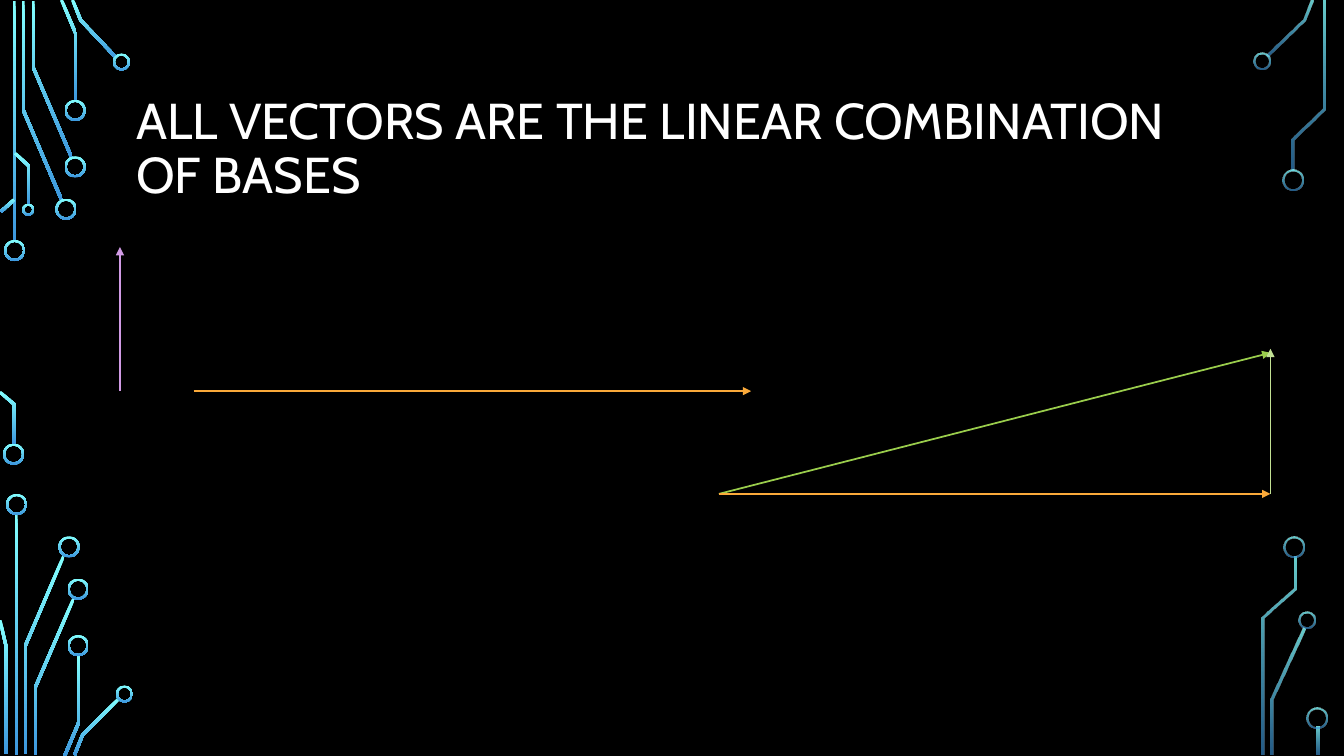
from math import hypot

from lxml import etree
from pptx import Presentation
from pptx.dml.color import RGBColor
from pptx.enum.shapes import MSO_CONNECTOR, MSO_SHAPE
from pptx.enum.text import MSO_ANCHOR, MSO_AUTO_SIZE, PP_ALIGN
from pptx.oxml.ns import qn
from pptx.util import Inches, Pt

STRAIGHT = MSO_CONNECTOR.STRAIGHT
DONUT = MSO_SHAPE.DONUT
MIDDLE = MSO_ANCHOR.MIDDLE
NO_AUTOFIT = MSO_AUTO_SIZE.NONE
LEFT = PP_ALIGN.LEFT

TITLE = "ALL VECTORS ARE THE LINEAR COMBINATION OF BASES"
TITLE_BOX = (1.25, 0.68, 10.83, 1.62)
TITLE_FONT = {"name": "Cabin", "size": Pt(36), "bold": False}

ORIGIN, CORNER = (7.13, 4.9), (12.6, 4.9)
VECTORS = [
    (ORIGIN, (12.6, 3.5), "9ACD4C"),
    (ORIGIN, CORNER, "FAA93A"),
    (CORNER, (12.6, 3.46), "C2E194"),
    ((1.19, 3.88), (1.19, 2.45), "D19BE5"),
    ((1.92, 3.88), (7.45, 3.88), "FAA93A"),
]

GLOW = ("82FFFF", "3D97DE")
TRACE_WIDTH = 0.03
RING_WIDTH = 0.02
CIRCUITS = [
    {
        "opacity": (100, 100),
        "traces": [
            [(0.14, 0.01), (0.14, 2.4)],
            [(0.23, 0.01), (0.23, 1.09), (0.61, 1.98)],
            [(0.33, 0.01), (0.33, 0.67), (0.71, 1.56)],
            [(0.61, 0), (0.75, 0.33), (0.75, 1)],
            [(0.72, 0), (0.8, 0.2), (1.15, 0.57)],
            [(0.14, 1.98), (0.01, 2.1)],
            [(0, 3.89), (0.14, 4.01), (0.14, 4.41)],
            [(0.15, 1.52), (0.29, 1.65), (0.29, 2.03)],
            [(0.16, 5.1), (0.16, 7.49)],
            [(0.25, 7.48), (0.25, 6.41), (0.63, 5.52)],
            [(0, 6.15), (0.06, 6.41), (0.06, 7.48)],
            [(0.35, 7.49), (0.35, 6.82), (0.73, 5.94)],
            [(0.64, 7.5), (0.78, 7.17), (0.78, 6.5)],
            [(0.74, 7.49), (0.82, 7.29), (1.18, 6.93)],
        ],
        "rings": [
            (0.04, 2.38, 0.21), (0.03, 4.4, 0.21), (0.55, 1.97, 0.21),
            (0.64, 1.55, 0.21), (0.64, 0.99, 0.21), (1.12, 0.53, 0.17),
            (0.22, 2.02, 0.12), (0.06, 4.9, 0.21), (0.58, 5.32, 0.21),
            (0.67, 5.74, 0.21), (0.67, 6.3, 0.21), (1.15, 6.8, 0.17),
        ],
    },
    {
        "opacity": (80, 60),
        "traces": [
            [(12.57, 0.55), (12.93, 0.2), (13.01, 0)],
            [(12.62, 7.49), (12.62, 6.94), (12.93, 6.23)],
            [(12.82, 1.69), (12.82, 1.38), (13.13, 1.08), (13.13, 0.01)],
            [(12.53, 7.49), (12.53, 6.13), (12.84, 5.84), (12.84, 5.52)],
            [(13.07, 7.21), (13.07, 7.49)],
        ],
        "rings": [
            (12.43, 0.52, 0.17), (12.72, 1.68, 0.21), (12.88, 6.07, 0.17),
            (12.73, 5.32, 0.21), (12.96, 7.02, 0.21),
        ],
    },
]


def color(hex_value):
    return RGBColor.from_string(hex_value)


def normal(start, end):
    dx, dy = end[0] - start[0], end[1] - start[1]
    length = hypot(dx, dy)
    return -dy / length, dx / length


def trace_outline(points):
    normals = [normal(a, b) for a, b in zip(points, points[1:])]
    one_side, other_side = [], []
    for (x, y), (ax, ay), (bx, by) in zip(
        points, normals[:1] + normals, normals + normals[-1:]
    ):
        reach = TRACE_WIDTH / 2 / (1 + ax * bx + ay * by)
        dx, dy = (ax + bx) * reach, (ay + by) * reach
        one_side.append((Inches(x + dx), Inches(y + dy)))
        other_side.append((Inches(x - dx), Inches(y - dy)))
    return one_side + other_side[::-1]


def paint_glow(shape, opacity):
    shape.shadow.inherit = False
    shape.line.fill.background()
    shape.fill.gradient()
    shape.fill.gradient_angle = 270
    for stop, hex_value in zip(shape.fill.gradient_stops, GLOW):
        stop.color.rgb = color(hex_value)
    for tone, percent in zip(shape.element.spPr.iter(qn("a:srgbClr")), opacity):
        if percent < 100:
            etree.SubElement(tone, qn("a:alpha"), val=str(percent * 1000))


def draw_circuit(shapes, circuit):
    for points in circuit["traces"]:
        outline = trace_outline(points)
        builder = shapes.build_freeform(*outline[0])
        builder.add_line_segments(outline[1:], close=True)
        paint_glow(builder.convert_to_shape(), circuit["opacity"])
    for left, top, size in circuit["rings"]:
        ring = shapes.add_shape(DONUT, *map(Inches, (left, top, size, size)))
        ring.adjustments[0] = RING_WIDTH / size
        paint_glow(ring, circuit["opacity"])


def draw_vector(shapes, start, end, hex_value):
    vector = shapes.add_connector(STRAIGHT, *map(Inches, start + end))
    vector.line.color.rgb = color(hex_value)
    vector.line.width = Pt(1.25)
    etree.SubElement(vector.line._get_or_add_ln(), qn("a:tailEnd"), type="triangle")
    etree.SubElement(vector.element.spPr, qn("a:effectLst"))


def write_title(title):
    title.left, title.top, title.width, title.height = map(Inches, TITLE_BOX)
    frame = title.text_frame
    frame.text = TITLE
    frame.word_wrap = True
    frame.auto_size = NO_AUTOFIT
    frame.vertical_anchor = MIDDLE
    paragraph = frame.paragraphs[0]
    paragraph.alignment = LEFT
    paragraph.line_spacing = 0.9
    font = paragraph.runs[0].font
    for name, value in TITLE_FONT.items():
        setattr(font, name, value)
    font.color.rgb = color("FFFFFF")


def main():
    deck = Presentation()
    deck.slide_width, deck.slide_height = Inches(13.33), Inches(7.5)
    slide = deck.slides.add_slide(deck.slide_layouts[5])
    slide.background.fill.solid()
    slide.background.fill.fore_color.rgb = color("000000")
    for circuit in CIRCUITS:
        draw_circuit(slide.shapes, circuit)
    write_title(slide.shapes.title)
    for start, end, hex_value in VECTORS:
        draw_vector(slide.shapes, start, end, hex_value)
    deck.save("out.pptx")


if __name__ == "__main__":
    main()
